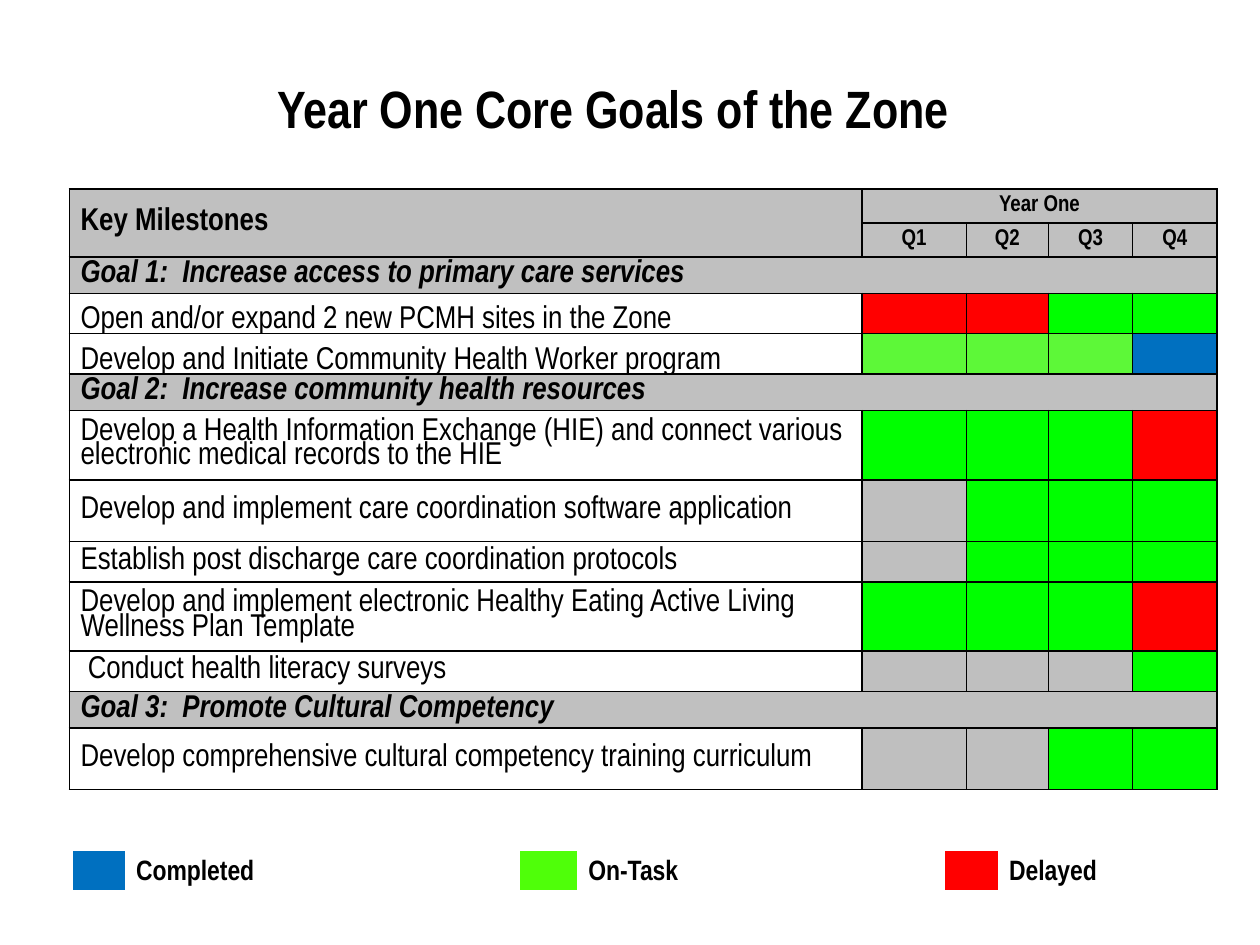
from lxml.etree import SubElement
from pptx import Presentation
from pptx.dml.color import RGBColor
from pptx.enum.text import MSO_ANCHOR, PP_ALIGN
from pptx.oxml.ns import qn
from pptx.util import Inches, Pt

FONT = "Arial Narrow"
WHITE, BLACK, HEAD = "FFFFFF", "000000", "C0C0C0"
FILLS = {"R": "FF0000", "G": "00FF00", "L": "5DF838", "B": "0070C0", "-": "BFBFBF"}
TITLE = "Year One Core Goals of the Zone"
COLS = [6.29, 0.83, 0.65, 0.67, 0.67]
QUARTERS = ["Q1", "Q2", "Q3", "Q4"]
HEAD_H = 0.27
ROWS = [
    ("Goal 1:  Increase access to primary care services", "", 0.29),
    ("Open and/or expand 2 new PCMH sites in the Zone", "RRGG", 0.32),
    ("Develop and Initiate Community Health Worker program", "LLLB", 0.32),
    ("Goal 2:  Increase community health resources", "", 0.29),
    ("Develop a Health Information Exchange (HIE) and connect various "
     "electronic medical records to the HIE", "GGGR", 0.55),
    ("Develop and implement care coordination software application", "-GGG", 0.49),
    ("Establish post discharge care coordination protocols", "-GGG", 0.32),
    ("Develop and implement electronic Healthy Eating Active Living "
     "Wellness Plan Template", "GGGR", 0.55),
    (" Conduct health literacy surveys", "---G", 0.32),
    ("Goal 3:  Promote Cultural Competency", "", 0.29),
    ("Develop comprehensive cultural competency training curriculum", "--GG", 0.49),
]
LOW_ROWS = (1, 2)
LEGEND = [("Completed", "0070C0", 0.41, 3.14), ("On-Task", "4FFF09", 0.45, 2.92),
          ("Delayed", "FF0000", 0.42, 1.67)]


def color(code):
    """Turn a hex string into a colour."""
    return RGBColor.from_string(code)


def write(frame, text, size, bold=True, italic=False, align=PP_ALIGN.LEFT, space=0.83):
    """Put one styled paragraph in a text frame."""
    para = frame.paragraphs[0]
    para.text, para.alignment, para.line_spacing = text, align, space
    font = para.font
    font.name, font.size, font.bold, font.italic = FONT, Pt(size), bold, italic
    font.color.rgb = color(BLACK)
    return para


def paint(cell, fill, line):
    """Set the margins, borders and fill of a cell."""
    cell.margin_left = cell.margin_right = Inches(0.09)
    cell.margin_top = cell.margin_bottom = 0
    cell.vertical_anchor = MSO_ANCHOR.MIDDLE
    props = cell._tc.get_or_add_tcPr()
    for side in ("lnL", "lnR", "lnT", "lnB"):
        edge = SubElement(props, qn("a:" + side), w=str(Pt(1)))
        if line:
            solid = SubElement(edge, qn("a:solidFill"))
            SubElement(solid, qn("a:srgbClr"), val=line)
        else:
            SubElement(edge, qn("a:noFill"))
    if fill:
        cell.fill.solid()
        cell.fill.fore_color.rgb = color(fill)
    else:
        cell.fill.background()


def grid(slide, left, top, cols, rows):
    """Add a plain table with the given column widths and row heights."""
    table = slide.shapes.add_table(len(rows), len(cols), Inches(left), Inches(top),
                                   Inches(sum(cols)), Inches(sum(rows))).table
    table.first_row = table.horz_banding = False
    for col, width in zip(table.columns, cols):
        col.width = Inches(width)
    for row, height in zip(table.rows, rows):
        row.height = Inches(height)
    return table


def goals(slide):
    """Draw the milestone table."""
    table = grid(slide, 0.55, 1.5, COLS, [HEAD_H] * 2 + [row[2] for row in ROWS])
    last = len(COLS) - 1
    marks = [""] * 2 + [row[1] for row in ROWS]
    for r, codes in enumerate(marks):
        fills = [WHITE] + [FILLS[c] for c in codes] if codes else [HEAD] * len(COLS)
        for c, fill in enumerate(fills):
            paint(table.cell(r, c), fill, BLACK)
    table.cell(0, 0).merge(table.cell(1, 0))
    table.cell(0, 1).merge(table.cell(0, last))
    write(table.cell(0, 0).text_frame, "Key Milestones", 18)
    write(table.cell(0, 1).text_frame, "Year One", 13, align=PP_ALIGN.CENTER)
    for c, name in enumerate(QUARTERS, 1):
        write(table.cell(1, c).text_frame, name, 13, align=PP_ALIGN.CENTER)
    for r, (text, codes, _) in enumerate(ROWS):
        cell = table.cell(r + 2, 0)
        if not codes:
            cell.merge(table.cell(r + 2, last))
        if r in LOW_ROWS:
            cell.vertical_anchor = MSO_ANCHOR.BOTTOM
        write(cell.text_frame, text, 18, bold=not codes, italic=not codes)


def legend(slide):
    """Draw the colour key."""
    cols = [width for item in LEGEND for width in item[2:]]
    table = grid(slide, 0.58, 6.75, cols, [0.31])
    for n, (name, fill, *_) in enumerate(LEGEND):
        paint(table.cell(0, 2 * n), fill, None)
        label = table.cell(0, 2 * n + 1)
        paint(label, None, None)
        label.margin_top = Inches(0.01)
        write(label.text_frame, name, 16, space=1.15).space_after = Pt(10)


def main():
    """Build and save the slide."""
    deck = Presentation()
    deck.slide_width, deck.slide_height = Inches(10), Inches(7.5)
    slide = deck.slides.add_slide(deck.slide_layouts[6])
    frame = slide.shapes.add_textbox(Inches(2.1), Inches(0.38),
                                     Inches(7.81), Inches(0.94)).text_frame
    frame.word_wrap, frame.vertical_anchor = True, MSO_ANCHOR.MIDDLE
    write(frame, TITLE, 30, space=1.0)
    goals(slide)
    legend(slide)
    deck.save("out.pptx")


if __name__ == "__main__":
    main()
